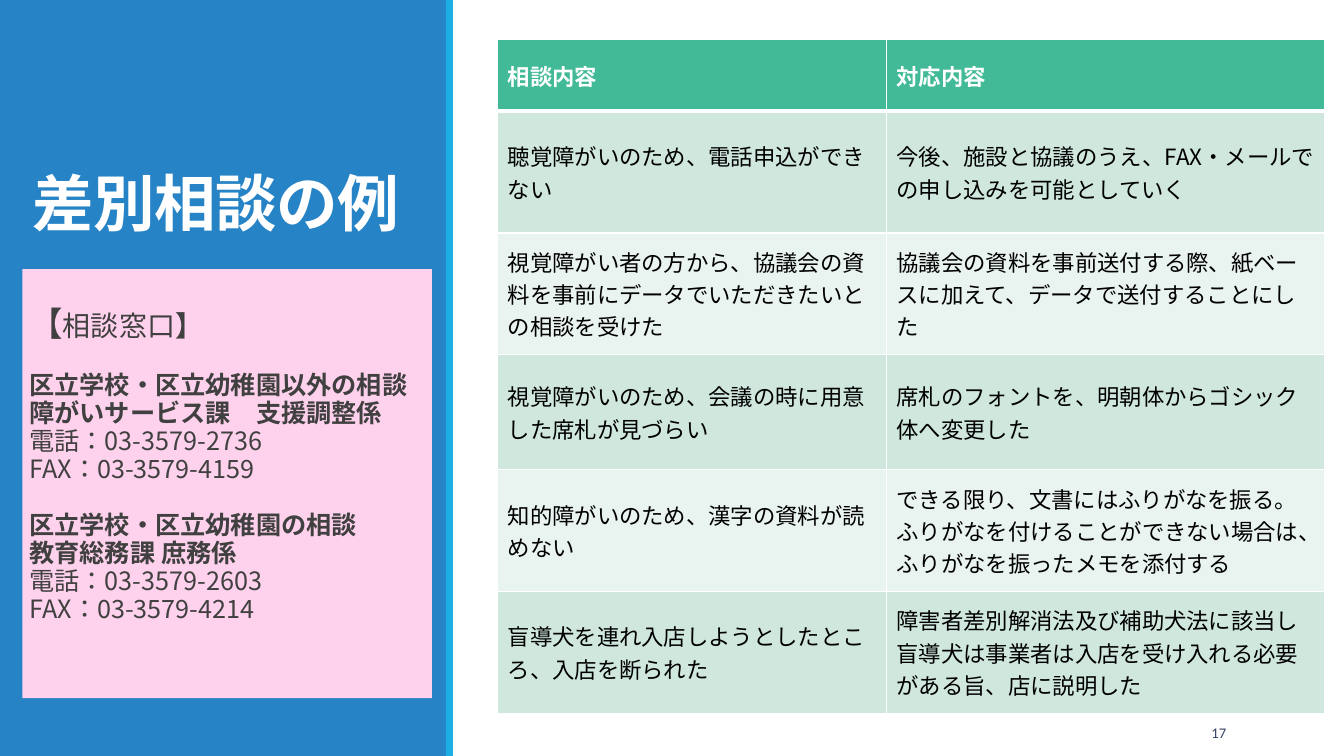
"""Build the slide of discrimination consultation examples and contact desks."""
from dataclasses import dataclass

from lxml.etree import SubElement
from pptx import Presentation
from pptx.dml.color import RGBColor
from pptx.enum.lang import MSO_LANGUAGE_ID
from pptx.enum.shapes import MSO_SHAPE
from pptx.enum.text import MSO_ANCHOR, MSO_AUTO_SIZE, PP_ALIGN
from pptx.oxml.ns import qn
from pptx.util import Pt


@dataclass(frozen=True)
class Theme:
    """Colours, fonts and type sizes."""
    panel: str = "2683C6"
    stripe: str = "1CADE4"
    desk: str = "FED2EC"
    header: str = "42BA97"
    bands: tuple = ("CFE7DD", "E9F3EF")
    white: str = "FFFFFF"
    black: str = "000000"
    grey: str = "404040"
    navy: str = "344068"
    japanese: str = "Noto Sans CJK JP"
    latin: str = "Calibri"
    title_size: float = 44
    bracket_size: float = 24
    heading_size: float = 20
    desk_size: float = 18
    table_size: float = 16
    number_size: float = 10.5


THEME = Theme()


def write(paragraph, text, *, size, color, bold=False, font=THEME.japanese, tracking=None):
    """Append a formatted run to a paragraph."""
    run = paragraph.add_run()
    run.text = text
    run.font.size = Pt(size)
    run.font.bold = bold
    run.font.name = font
    run.font.language_id = MSO_LANGUAGE_ID.JAPANESE
    run.font.color.rgb = RGBColor.from_string(color)
    properties = run.font._element
    SubElement(properties, qn("a:ea")).set("typeface", font)
    if tracking is not None:
        properties.set("spc", str(int(tracking * 100)))


def add_border(cell, side, width):
    """Draw one white side of a table cell."""
    line = SubElement(cell._tc.get_or_add_tcPr(), qn(f"a:{side}"), w=str(int(Pt(width))))
    fill = SubElement(line, qn("a:solidFill"))
    SubElement(fill, qn("a:srgbClr"), val=THEME.white)


presentation = Presentation()
presentation.slide_width, presentation.slide_height = Pt(960), Pt(540)
slide = presentation.slides.add_slide(presentation.slide_layouts[1])

heading = slide.shapes.title
heading.left, heading.top, heading.width, heading.height = Pt(16), Pt(126), Pt(285), Pt(106.5)
heading.text_frame.auto_size = MSO_AUTO_SIZE.NONE
heading.text_frame.vertical_anchor = MSO_ANCHOR.TOP
heading.text_frame.margin_top = Pt(0)
heading_line = heading.text_frame.paragraphs[0]
heading_line.alignment = PP_ALIGN.LEFT
heading_line.line_spacing = 0.85
write(heading_line, "差別相談の例", size=THEME.title_size, color=THEME.white, bold=True, tracking=-0.5)

for left, width, color in ((0, 319, THEME.panel), (318.5, 5, THEME.stripe)):
    backdrop = slide.shapes.add_shape(MSO_SHAPE.RECTANGLE, Pt(left), Pt(0), Pt(width), Pt(540))
    backdrop.shadow.inherit = False
    backdrop.fill.solid()
    backdrop.fill.fore_color.rgb = RGBColor.from_string(color)
    backdrop.line.fill.background()
    heading.element.addprevious(backdrop.element)

CASES = [
    ("相談内容", "対応内容"),
    ("聴覚障がいのため、電話申込ができない",
     "今後、施設と協議のうえ、FAX・メールでの申し込みを可能としていく"),
    ("視覚障がい者の方から、協議会の資料を事前にデータでいただきたいとの相談を受けた",
     "協議会の資料を事前送付する際、紙ベースに加えて、データで送付することにした"),
    ("視覚障がいのため、会議の時に用意した席札が見づらい",
     "席札のフォントを、明朝体からゴシック体へ変更した"),
    ("知的障がいのため、漢字の資料が読めない",
     "できる限り、文書にはふりがなを振る。ふりがなを付けることができない場合は、ふりがなを振ったメモを添付する"),
    ("盲導犬を連れ入店しようとしたところ、入店を断られた",
     "障害者差別解消法及び補助犬法に該当し盲導犬は事業者は入店を受け入れる必要がある旨、店に説明した"),
]
COLUMN_WIDTHS = (277.75, 313.25)
ROW_HEIGHTS = (51, 87, 87, 82, 87, 87)

cases = slide.shapes.add_table(
    len(CASES), len(COLUMN_WIDTHS), Pt(355.5), Pt(28.5),
    Pt(sum(COLUMN_WIDTHS)), Pt(sum(ROW_HEIGHTS))).table
for column, width in zip(cases.columns, COLUMN_WIDTHS):
    column.width = Pt(width)
for row_index, (case, height) in enumerate(zip(CASES, ROW_HEIGHTS)):
    cases.rows[row_index].height = Pt(height)
    is_header = row_index == 0
    for column_index, wording in enumerate(case):
        cell = cases.cell(row_index, column_index)
        cell.vertical_anchor = MSO_ANCHOR.MIDDLE
        for side in ("lnL", "lnR", "lnT", "lnB"):
            under_header = (row_index, side) in ((0, "lnB"), (1, "lnT"))
            add_border(cell, side, 3 if under_header else 1)
        cell.fill.solid()
        cell.fill.fore_color.rgb = RGBColor.from_string(
            THEME.header if is_header else THEME.bands[(row_index - 1) % 2])
        write(cell.text_frame.paragraphs[0], wording, size=THEME.table_size,
              color=THEME.white if is_header else THEME.black, bold=is_header)

DESKS = [
    ("区立学校・区立幼稚園以外の相談", "障がいサービス課　支援調整係",
     "電話：03-3579-2736", "FAX：03-3579-4159"),
    ("区立学校・区立幼稚園の相談", "教育総務課 庶務係",
     "電話：03-3579-2603", "FAX：03-3579-4214"),
]
LINE_HEIGHT = 20

desks = slide.placeholders[1]
desks.left, desks.top, desks.width, desks.height = Pt(16), Pt(192.25), Pt(292.5), Pt(306.5)
desks.fill.solid()
desks.fill.fore_color.rgb = RGBColor.from_string(THEME.desk)
desk_text = desks.text_frame
desk_text.auto_size = MSO_AUTO_SIZE.NONE
desk_text.vertical_anchor = MSO_ANCHOR.MIDDLE
desk_text.margin_left = desk_text.margin_right = Pt(5)
desk_text.margin_top, desk_text.margin_bottom = Pt(3), Pt(3 + LINE_HEIGHT)

desk_heading = desk_text.paragraphs[0]
write(desk_heading, "【", size=THEME.bracket_size, color=THEME.grey)
write(desk_heading, "相談窓口", size=THEME.heading_size, color=THEME.grey)
write(desk_heading, "】", size=THEME.heading_size, color=THEME.grey, bold=True)
for desk in DESKS:
    for line_index, wording in enumerate(desk):
        write(desk_text.add_paragraph(), wording, size=THEME.desk_size,
              color=THEME.grey, bold=line_index < 2)
for line_index, desk_line in enumerate(desk_text.paragraphs):
    starts_desk = line_index % len(DESKS[0]) == 1
    desk_line.line_spacing = Pt(LINE_HEIGHT)
    desk_line.space_before = Pt(LINE_HEIGHT if starts_desk else 0)
    desk_line.space_after = Pt(0)
    properties = desk_line._p.get_or_add_pPr()
    properties.set("marL", "0")
    properties.set("indent", "0")
    SubElement(properties, qn("a:buNone"))

page_number = slide.shapes.add_textbox(Pt(780), Pt(508.5), Pt(103), Pt(29)).text_frame
page_number.word_wrap = True
page_number.vertical_anchor = MSO_ANCHOR.MIDDLE
page_number.paragraphs[0].alignment = PP_ALIGN.RIGHT
write(page_number.paragraphs[0], "17", size=THEME.number_size, color=THEME.navy, font=THEME.latin)

presentation.save("out.pptx")
